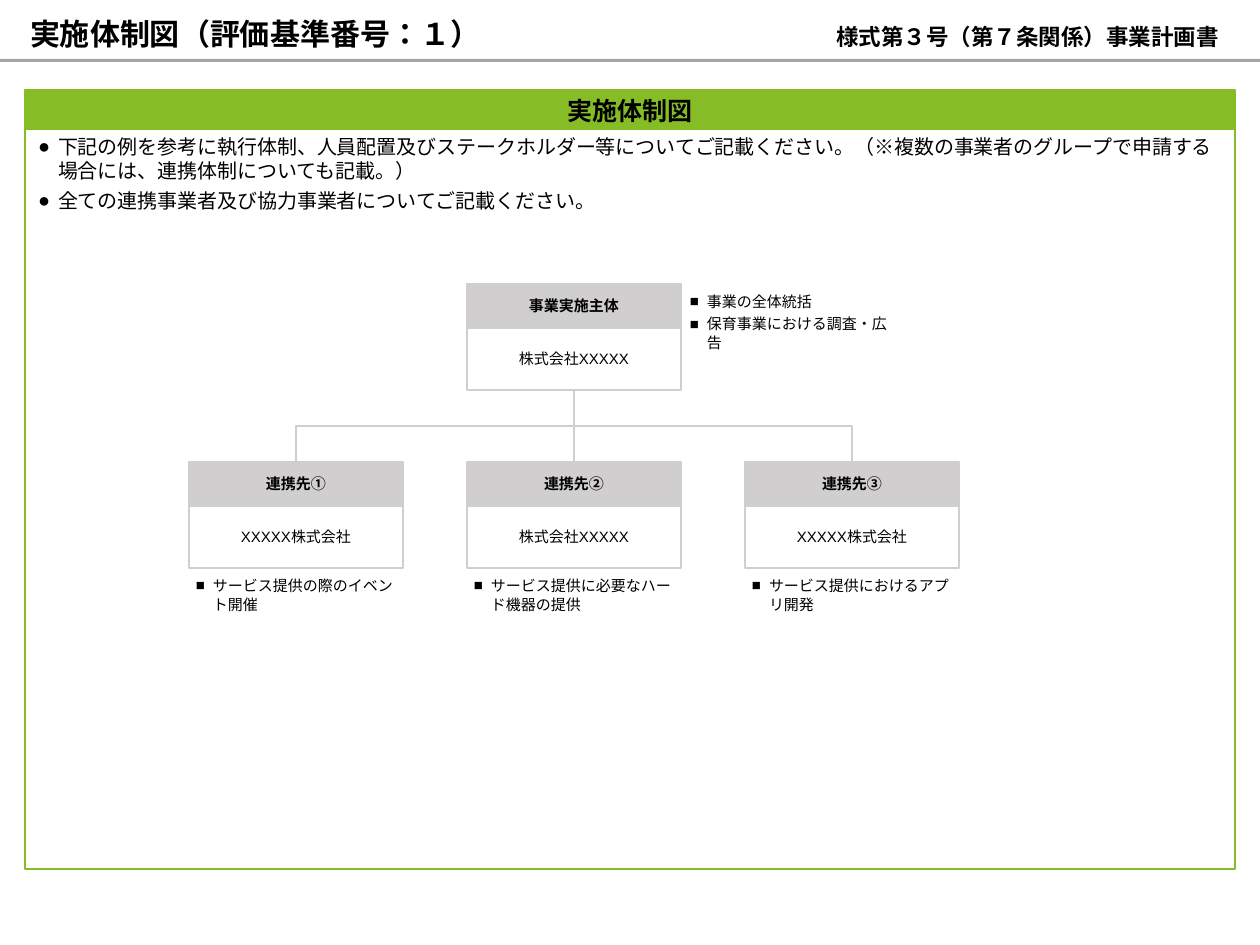
"""Build the project organisation chart slide."""
from lxml import etree
from pptx import Presentation
from pptx.dml.color import RGBColor
from pptx.enum.lang import MSO_LANGUAGE_ID
from pptx.enum.shapes import MSO_CONNECTOR, MSO_SHAPE
from pptx.enum.text import MSO_ANCHOR, PP_ALIGN
from pptx.oxml.ns import qn
from pptx.util import Pt

PX = 10160
BLACK = RGBColor(0x00, 0x00, 0x00)
WHITE = RGBColor(0xFF, 0xFF, 0xFF)
GREEN = RGBColor(0x86, 0xBC, 0x25)
RULE_GREY = RGBColor(0xA5, 0xA5, 0xA5)
BOX_GREY = RGBColor(0xD0, 0xCE, 0xCE)
RECTANGLE = MSO_SHAPE.RECTANGLE
STRAIGHT, ELBOW = MSO_CONNECTOR.STRAIGHT, MSO_CONNECTOR.ELBOW
TOP, MIDDLE, BOTTOM = MSO_ANCHOR.TOP, MSO_ANCHOR.MIDDLE, MSO_ANCHOR.BOTTOM
LEFT, CENTER = PP_ALIGN.LEFT, PP_ALIGN.CENTER
JAPANESE = MSO_LANGUAGE_ID.JAPANESE

BOX_WIDTH, HEAD_HEIGHT, BODY_HEIGHT = 214, 44, 62
BOX_HEIGHT = HEAD_HEIGHT + BODY_HEIGHT
COLUMN_LEFT, COLUMN_STEP = 189, 278
LEAD_LEFT, LEAD_TOP, PARTNER_TOP = COLUMN_LEFT + COLUMN_STEP, 284, 462
LEAD_CENTER = LEAD_LEFT + BOX_WIDTH // 2
LEAD_BOTTOM = LEAD_TOP + BOX_HEIGHT
LINK_HEIGHT = PARTNER_TOP - LEAD_BOTTOM

prs = Presentation()
prs.slide_width, prs.slide_height = 1260 * PX, 945 * PX
slide = prs.slides.add_slide(prs.slide_layouts[6])
shapes = slide.shapes


def add_box(left, top, width, height, fill, line, line_width=1):
    box = shapes.add_shape(RECTANGLE, left * PX, top * PX, width * PX, height * PX)
    box.shadow.inherit = False
    box.fill.solid()
    box.fill.fore_color.rgb = fill
    box.line.color.rgb = line
    box.line.width = Pt(line_width)
    return box


def write(shape, lines, size, font="Calibri", bold=False, align=LEFT, anchor=TOP,
          inset=(7, 7), bullet=None, indent=0, gap=0, spacing=None):
    frame = shape.text_frame
    frame.word_wrap = True
    frame.vertical_anchor = anchor
    frame.margin_left = frame.margin_right = inset[0] * PX
    frame.margin_top = frame.margin_bottom = inset[1] * PX
    frame.text = "\n".join(lines)
    for index, paragraph in enumerate(frame.paragraphs):
        paragraph.alignment = align
        paragraph.line_spacing = spacing
        paragraph.space_before = Pt(gap if index else 0)
        if bullet:
            properties = paragraph._p.get_or_add_pPr()
            properties.set("marL", str(indent * PX))
            properties.set("indent", str(-indent * PX))
            etree.SubElement(properties, qn("a:buFont"), typeface="Arial")
            etree.SubElement(properties, qn("a:buChar"), char=bullet)
        for run in paragraph.runs:
            run.font.size = Pt(size)
            run.font.bold = bold
            run.font.name = font
            run.font.color.rgb = BLACK
            run.font.language_id = JAPANESE
            etree.SubElement(run._r.get_or_add_rPr(), qn("a:ea"), typeface=font)


title = shapes.add_textbox(30 * PX, 19 * PX, 618 * PX, 33 * PX)
write(title, ["実施体制図（評価基準番号：１）"], 24, bold=True, anchor=BOTTOM, inset=(0, 0))
form_name = shapes.add_textbox(820 * PX, 28 * PX, 415 * PX, 22 * PX)
write(form_name, ["様式第３号（第７条関係）事業計画書"], 18, "Noto Sans CJK JP", True,
      CENTER, BOTTOM, (0, 0))

title_rule = add_box(0, 59, 1260, 3, RULE_GREY, RULE_GREY)
title_rule.line.fill.background()

section_head = add_box(25, 90, 1210, 41, GREEN, GREEN, 1.5)
write(section_head, ["実施体制図"], 20, bold=True, align=CENTER, anchor=MIDDLE, inset=(13, 6))
section_body = add_box(25, 129, 1210, 740, WHITE, GREEN, 1.5)
write(section_body, [
    "下記の例を参考に執行体制、人員配置及びステークホルダー等についてご記載ください。"
    "（※複数の事業者のグループで申請する場合には、連携体制についても記載。）",
    "全ての連携事業者及び協力事業者についてご記載ください。",
], 16, inset=(13, 6), bullet="●", indent=20, gap=4.3)

organisations = [
    (LEAD_LEFT, LEAD_TOP, "事業実施主体", "株式会社XXXXX",
     (683, LEAD_TOP), ["事業の全体統括", "保育事業における調査・広告"]),
]
partners = [
    ("連携先①", "XXXXX株式会社", "サービス提供の際のイベント開催"),
    ("連携先②", "株式会社XXXXX", "サービス提供に必要なハード機器の提供"),
    ("連携先③", "XXXXX株式会社", "サービス提供におけるアプリ開発"),
]
for column, (role, company, duty) in enumerate(partners):
    left = COLUMN_LEFT + column * COLUMN_STEP
    organisations.append((left, PARTNER_TOP, role, company,
                          (left, PARTNER_TOP + BOX_HEIGHT), [duty]))

role_boxes, company_boxes = [], []
for left, top, role, company, (duty_left, duty_top), duties in organisations:
    company_box = add_box(left, top + HEAD_HEIGHT, BOX_WIDTH, BODY_HEIGHT, WHITE, BOX_GREY)
    write(company_box, [company], 12, "Arial", align=CENTER, anchor=MIDDLE)
    role_box = add_box(left, top, BOX_WIDTH, HEAD_HEIGHT, BOX_GREY, BOX_GREY)
    write(role_box, [role], 12, "Arial", True, CENTER, MIDDLE)
    duty_list = shapes.add_textbox(duty_left * PX, duty_top * PX, BOX_WIDTH * PX, 95 * PX)
    write(duty_list, duties, 12, bullet="■", indent=17, gap=3, spacing=1.06)
    role_boxes.append(role_box)
    company_boxes.append(company_box)

for side, partner_box in zip((-1, 0, 1), role_boxes[1:]):
    link = shapes.add_connector(
        ELBOW if side else STRAIGHT, LEAD_CENTER * PX, LEAD_BOTTOM * PX,
        (LEAD_CENTER + side * COLUMN_STEP) * PX, PARTNER_TOP * PX)
    link.begin_connect(company_boxes[0], 2)
    link.end_connect(partner_box, 0)
    link.line.color.rgb = BOX_GREY
    link.line.width = Pt(1)
    etree.SubElement(link._element.spPr, qn("a:effectLst"))
    if side:
        link.left = (LEAD_CENTER + side * COLUMN_STEP // 2 - LINK_HEIGHT // 2) * PX
        link.top = (LEAD_BOTTOM + LINK_HEIGHT // 2 - COLUMN_STEP // 2) * PX
        link.width, link.height = LINK_HEIGHT * PX, COLUMN_STEP * PX
        turn = link._element.spPr.find(qn("a:xfrm"))
        turn.set("rot", "5400000" if side < 0 else "16200000")
        turn.set("flipH", "0" if side < 0 else "1")

prs.save("out.pptx")
